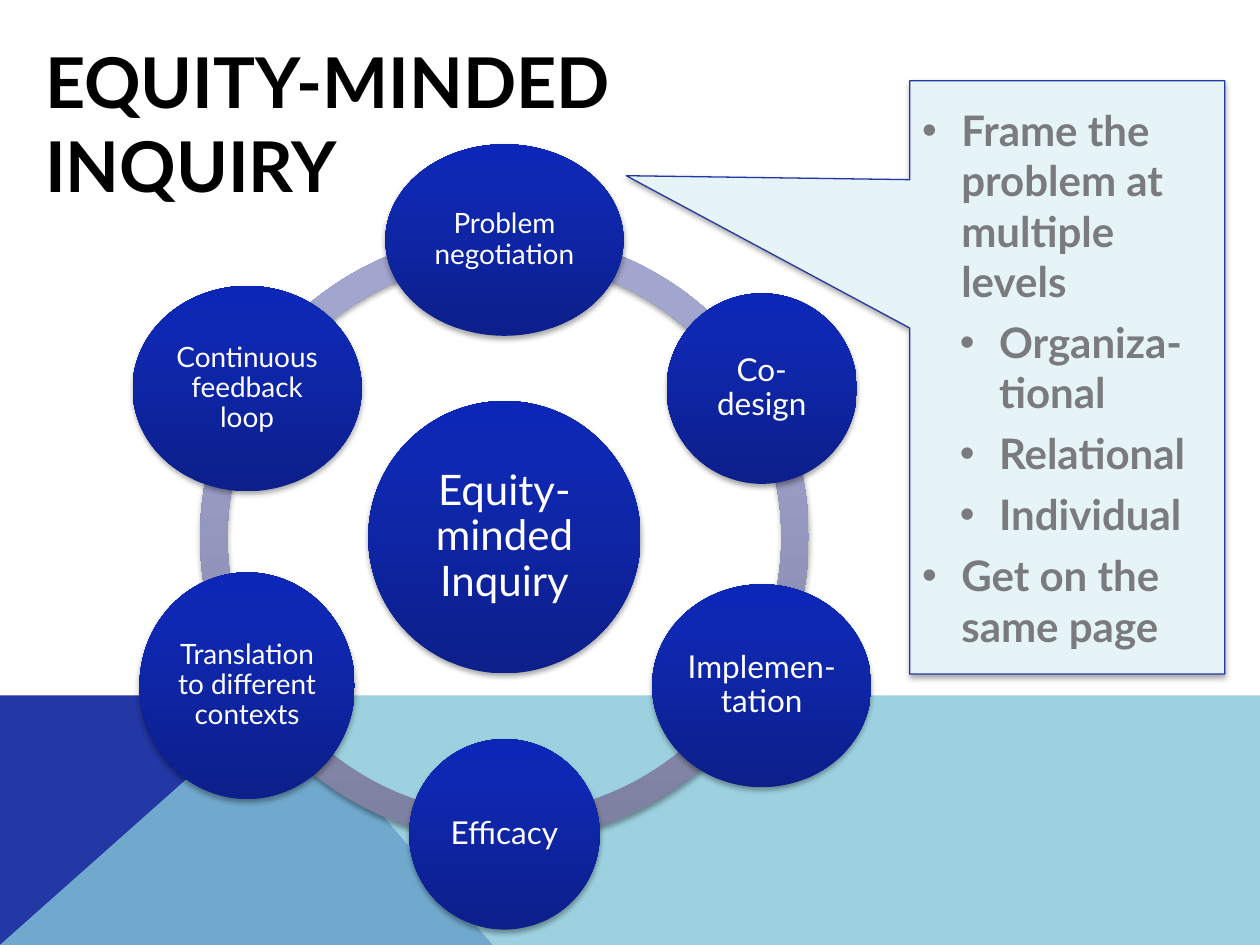
import math
from dataclasses import dataclass

import pptx
import pptx.dml.color
import pptx.enum.shapes
import pptx.enum.text
import pptx.oxml
import pptx.oxml.ns
import pptx.util
from pptx.util import Cm

MSO = pptx.enum.shapes.MSO_SHAPE
ALIGN = pptx.enum.text.PP_ALIGN
ANCHOR = pptx.enum.text.MSO_ANCHOR


@dataclass(frozen=True)
class Theme:
    font: str = "Lato"
    title: str = "000000"
    body: str = "797B7E"
    on_dark: str = "FFFFFF"
    navy: str = "2337A5"
    aqua: str = "85C6D9"
    callout: str = "E7F4F7"
    node_stops: tuple = ((0, "0C1F8A"), (80, "0F28B3"), (100, "0C26B7"))
    ring_stops: tuple = ((0, "7D7F9F"), (80, "A2A5CE"), (100, "A2A5D0"))
    title_size: int = 40
    body_size: int = 24
    hub_size: int = 24


@dataclass(frozen=True)
class Node:
    text: str
    width: float
    height: float
    size: int


@dataclass(frozen=True)
class Bullet:
    text: str
    level: int = 0


THEME = Theme()
CENTER_X, CENTER_Y = 10.17, 10.83
ORBIT = 5.99
RING_SIZE = 12.27
RING_THICKNESS = 0.045
HORIZON = 14.02
SLIDE_W, SLIDE_H = 25.4, 19.05

HUB = Node("Equity-minded Inquiry", 5.49, 5.49, THEME.hub_size)
NODES = [  # clockwise from the top
    Node("Problem negotiation", 4.8, 3.86, 16),
    Node("Co-design", 3.84, 3.84, 18),
    Node("Implemen-tation", 4.42, 4.09, 18),
    Node("Efficacy", 3.84, 3.84, 18),
    Node("Translation to different contexts", 4.34, 4.57, 16),
    Node("Continuous feedback loop", 4.62, 4.14, 16),
]
BULLETS = [
    Bullet("Frame the problem at multiple levels"),
    Bullet("Organiza-tional", 1),
    Bullet("Relational", 1),
    Bullet("Individual", 1),
    Bullet("Get on the same page"),
]


def rgb(color: str) -> pptx.dml.color.RGBColor:
    return pptx.dml.color.RGBColor.from_string(color)


def xml(body: str):
    """Parse one DrawingML element given without its namespace declaration."""
    head, rest = body.split(">", 1)
    return pptx.oxml.parse_xml(f"{head} {pptx.oxml.ns.nsdecls('a')}>{rest}")


def set_gradient(shape, stops: tuple) -> None:
    """Fill from the bottom upwards."""
    gs = "".join(
        f'<a:gs pos="{pos * 1000}"><a:srgbClr val="{color}"/></a:gs>'
        for pos, color in stops
    )
    fill = xml(f'<a:gradFill rotWithShape="1"><a:gsLst>{gs}</a:gsLst>'
               '<a:lin ang="16200000" scaled="0"/></a:gradFill>')
    shape.element.spPr.find(pptx.oxml.ns.qn("a:prstGeom")).addnext(fill)


def add_shadow(shape) -> None:
    shape.shadow.inherit = False
    effects = shape.element.spPr.find(pptx.oxml.ns.qn("a:effectLst"))
    effects.append(xml(
        '<a:outerShdw blurRad="40000" dist="23000" dir="5400000" rotWithShape="0">'
        '<a:srgbClr val="000000"><a:alpha val="35000"/></a:srgbClr></a:outerShdw>'))


def add_run(p, text: str, size: int, color: str, bold: bool = False) -> None:
    r = p.add_run()
    r.text = text
    r.font.name = THEME.font
    r.font.size = pptx.util.Pt(size)
    r.font.bold = bold
    r.font.color.rgb = rgb(color)


def add_polygon(s, points: list, color: str):
    builder = s.shapes.build_freeform(Cm(points[0][0]), Cm(points[0][1]))
    builder.add_line_segments([(Cm(x), Cm(y)) for x, y in points[1:]], close=True)
    sp = builder.convert_to_shape()
    sp.fill.solid()
    sp.fill.fore_color.rgb = rgb(color)
    sp.line.fill.background()
    sp.shadow.inherit = False
    return sp


def add_backdrop(s) -> None:
    add_polygon(s, [(0, SLIDE_H), (0, HORIZON), (5.66, HORIZON), (9.93, SLIDE_H)],
                THEME.navy)
    veil = add_polygon(s, [(0, SLIDE_H), (5.66, HORIZON), (SLIDE_W, HORIZON),
                           (SLIDE_W, SLIDE_H)], THEME.aqua)
    color = veil.element.spPr.find(".//" + pptx.oxml.ns.qn("a:srgbClr"))
    color.append(xml('<a:alpha val="80000"></a:alpha>'))


def add_centered(s, kind, x: float, y: float, width: float, height: float,
                 stops: tuple):
    sp = s.shapes.add_shape(kind, Cm(x - width / 2), Cm(y - height / 2),
                            Cm(width), Cm(height))
    set_gradient(sp, stops)
    sp.line.fill.background()
    add_shadow(sp)
    return sp


def add_ring(s) -> None:
    step = 360 // len(NODES)
    for i in range(len(NODES)):
        start = (210 - step * i) % 360
        arc = add_centered(s, MSO.BLOCK_ARC, CENTER_X, CENTER_Y,
                           RING_SIZE, RING_SIZE, THEME.ring_stops)
        # Angles are held in 60000ths of a degree, adjustments in 100000ths
        arc.adjustments[0] = start * 0.6
        arc.adjustments[1] = (start + step) % 360 * 0.6
        arc.adjustments[2] = RING_THICKNESS


def add_node(s, node: Node, x: float, y: float) -> None:
    sp = add_centered(s, MSO.OVAL, x, y, node.width, node.height, THEME.node_stops)
    tf = sp.text_frame
    tf.word_wrap = True
    tf.vertical_anchor = ANCHOR.MIDDLE
    tf.margin_left = tf.margin_right = tf.margin_top = tf.margin_bottom = Cm(0.06)
    p = tf.paragraphs[0]
    p.alignment = ALIGN.CENTER
    p.line_spacing = 0.9
    add_run(p, node.text, node.size, THEME.on_dark)


def add_callout(s) -> None:
    sp = s.shapes.add_shape(MSO.RECTANGULAR_CALLOUT, Cm(18.34), Cm(1.63),
                            Cm(6.35), Cm(11.96))
    sp.adjustments[0], sp.adjustments[1] = -1.4, -0.34
    sp.fill.solid()
    sp.fill.fore_color.rgb = rgb(THEME.callout)
    sp.line.color.rgb = rgb(THEME.navy)
    sp.line.width = pptx.util.Pt(0.75)
    add_shadow(sp)
    tf = sp.text_frame
    tf.word_wrap = True
    tf.vertical_anchor = ANCHOR.MIDDLE
    for i, bullet in enumerate(BULLETS):
        p = tf.add_paragraph() if i else tf.paragraphs[0]
        p.level = bullet.level
        p.alignment = ALIGN.LEFT
        p.space_before = pptx.util.Pt(6)
        pPr = p._p.get_or_add_pPr()
        pPr.set("marL", str(Cm(0.79 + 0.76 * bullet.level)))
        pPr.set("indent", str(Cm(-0.79)))
        pPr.append(xml('<a:buFont typeface="Arial"></a:buFont>'))
        pPr.append(xml('<a:buChar char="•"></a:buChar>'))
        add_run(p, bullet.text, THEME.body_size, THEME.body, bold=True)


def add_title(s) -> None:
    tf = s.shapes.add_textbox(Cm(0.66), Cm(0.66), Cm(15.62), Cm(1.96)).text_frame
    tf.word_wrap = True
    add_run(tf.paragraphs[0], "EQUITY-MINDED INQUIRY", THEME.title_size,
            THEME.title, bold=True)


def main() -> None:
    prs = pptx.Presentation()
    prs.slide_width, prs.slide_height = Cm(SLIDE_W), Cm(SLIDE_H)
    s = prs.slides.add_slide(prs.slide_layouts[6])
    add_backdrop(s)
    add_ring(s)
    add_node(s, HUB, CENTER_X, CENTER_Y)
    for i, node in enumerate(NODES):
        angle = math.tau * i / len(NODES) - math.pi / 2
        add_node(s, node, CENTER_X + ORBIT * math.cos(angle),
                 CENTER_Y + ORBIT * math.sin(angle))
    add_callout(s)
    add_title(s)
    prs.save("out.pptx")


if __name__ == "__main__":
    main()
